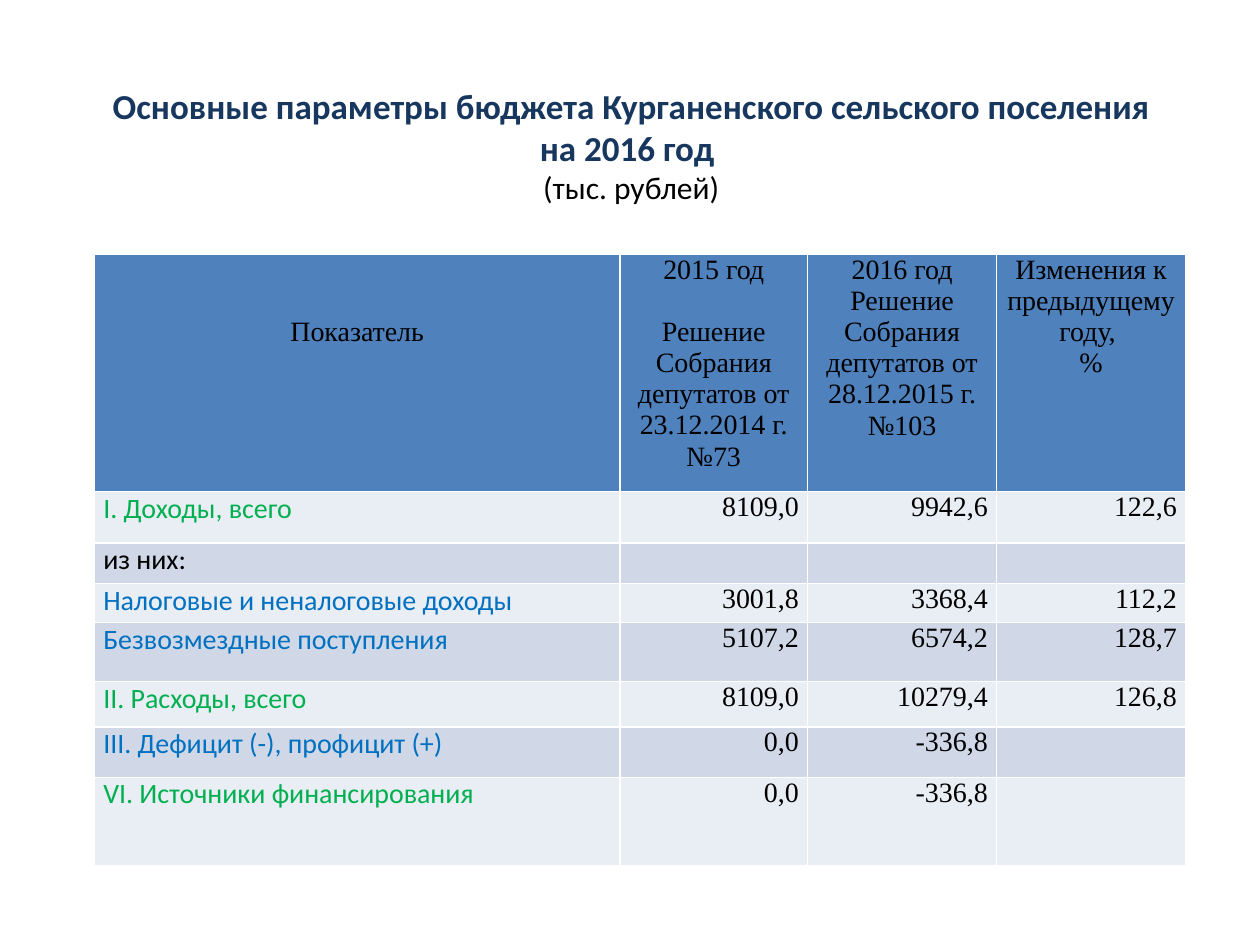
from copy import deepcopy

from lxml.etree import SubElement
from pptx import Presentation
from pptx.dml.color import RGBColor
from pptx.enum.text import MSO_ANCHOR, MSO_AUTO_SIZE, PP_ALIGN
from pptx.oxml.ns import qn
from pptx.util import Inches, Pt

COLORS = {
    "navy": "17375E",
    "black": "000000",
    "white": "FFFFFF",
    "green": "00B050",
    "blue": "0070C0",
    "header": "4F81BD",
    "light": "E9EDF4",
    "dark": "D0D8E8",
}
SANS, SERIF = "Calibri", "Times New Roman"
COL_WIDTHS = [4.17, 1.49, 1.5, 1.5]
ROW_HEIGHTS = [1.88, 0.41, 0.32, 0.31, 0.47, 0.36, 0.4, 0.7]
LINE_GAP = 17.7
HEADERS = [
    ["Показатель"],
    ["2015 год", "Решение Собрания депутатов от 23.12.2014 г. №73"],
    ["2016 год", "Решение Собрания депутатов от 28.12.2015 г. №103"],
    ["Изменения к предыдущему году, ", "%"],
]
ROWS = [
    ("I. Доходы, всего", "green", ["8109,0", "9942,6", "122,6"]),
    ("из них:", "black", ["", "", ""]),
    ("Налоговые и неналоговые доходы", "blue", ["3001,8", "3368,4", "112,2"]),
    ("Безвозмездные поступления", "blue", ["5107,2", "6574,2", "128,7"]),
    ("II. Расходы, всего", "green", ["8109,0", "10279,4", "126,8"]),
    ("III. Дефицит (-), профицит (+)", "blue", ["0,0", "-336,8", ""]),
    ("VI. Источники финансирования", "green", ["0,0", "-336,8", ""]),
]


def add_text(p, text, size=16, font=SERIF, color="black", bold=False,
             align=PP_ALIGN.LEFT):
    p.alignment = align
    r = p.add_run()
    r.text = text
    r.font.size = Pt(size)
    r.font.name = font
    r.font.bold = bold
    r.font.color.rgb = RGBColor.from_string(COLORS[color])
    return r


def add_break(p, r):
    p.add_line_break()
    p._p.findall(qn("a:br"))[-1].append(deepcopy(r._r.rPr))


def style_cell(cell, fill):
    cell.margin_left = cell.margin_right = Inches(0.07)
    cell.margin_top = cell.margin_bottom = 0
    props = cell._tc.get_or_add_tcPr()
    for side in ("lnL", "lnR", "lnT", "lnB"):
        line = SubElement(props, qn(f"a:{side}"), w=str(Pt(1)))
        solid = SubElement(line, qn("a:solidFill"))
        SubElement(solid, qn("a:srgbClr"), val=COLORS["white"])
    cell.fill.solid()
    cell.fill.fore_color.rgb = RGBColor.from_string(COLORS[fill])


def add_title(s, left, top, width, height):
    sp = s.shapes.title
    sp.left, sp.top, sp.width, sp.height = left, top, width, height
    tf = sp.text_frame
    tf.word_wrap = True
    tf.auto_size = MSO_AUTO_SIZE.NONE
    tf.vertical_anchor = MSO_ANCHOR.MIDDLE
    p = tf.paragraphs[0]
    for text in ("Основные параметры бюджета Курганенского сельского поселения",
                 "на 2016 год "):
        r = add_text(p, text, size=20, font=SANS, color="navy", bold=True,
                     align=PP_ALIGN.CENTER)
        add_break(p, r)
    add_text(p, "(тыс. рублей)", size=18, font=SANS, align=PP_ALIGN.CENTER)


def add_budget_table(s, left, top, width, height):
    table = s.shapes.add_table(len(ROW_HEIGHTS), len(COL_WIDTHS),
                               left, top, width, height).table
    for column, w in zip(table.columns, COL_WIDTHS):
        column.width = Inches(w)
    for row, h in zip(table.rows, ROW_HEIGHTS):
        row.height = Inches(h)

    for col, lines in enumerate(HEADERS):
        cell = table.cell(0, col)
        style_cell(cell, "header")
        tf = cell.text_frame
        for i, text in enumerate(lines):
            p = tf.add_paragraph() if i else tf.paragraphs[0]
            add_text(p, text, align=PP_ALIGN.CENTER)
    table.cell(0, 0).margin_top = Pt(2 * LINE_GAP)
    table.cell(0, 1).text_frame.paragraphs[1].space_before = Pt(LINE_GAP)

    for i, (label, color, values) in enumerate(ROWS, start=1):
        for col, text in enumerate([label] + values):
            cell = table.cell(i, col)
            style_cell(cell, "light" if i % 2 else "dark")
            p = cell.text_frame.paragraphs[0]
            if col == 0:
                add_text(p, text, font=SANS, color=color)
            elif text:
                add_text(p, text, align=PP_ALIGN.RIGHT)


def main():
    prs = Presentation()
    prs.slide_width, prs.slide_height = Inches(10), Inches(7.5)
    s = prs.slides.add_slide(prs.slide_layouts[5])
    add_title(s, Inches(0.51), Inches(0.44), Inches(9), Inches(1.42))
    add_budget_table(s, Inches(0.75), Inches(2.02),
                     Inches(sum(COL_WIDTHS)), Inches(sum(ROW_HEIGHTS)))
    prs.save("out.pptx")


if __name__ == "__main__":
    main()
